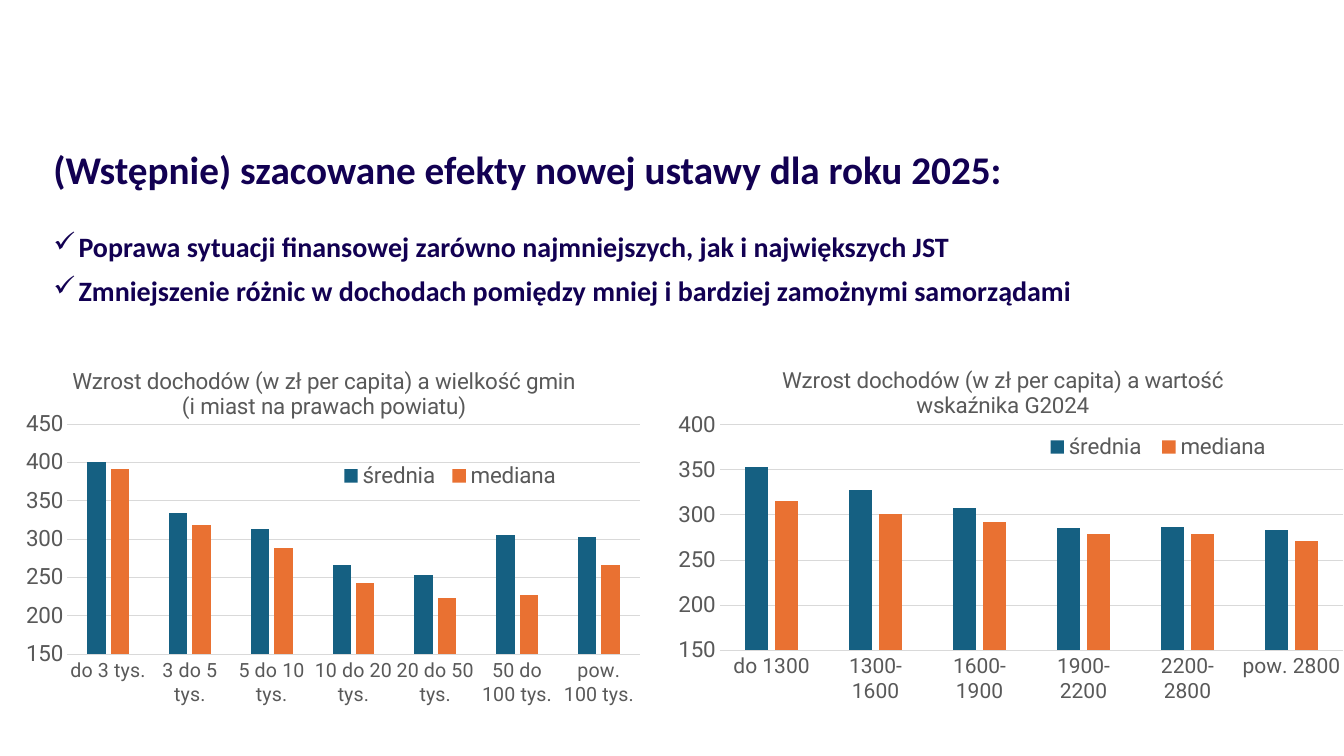
from dataclasses import dataclass

import pptx
import pptx.chart.chart
import pptx.chart.data
import pptx.dml.color
import pptx.enum.chart
import pptx.enum.text
import pptx.oxml
import pptx.oxml.ns
import pptx.slide
import pptx.text.text
import pptx.util

Pt = pptx.util.Pt


@dataclass(frozen=True)
class Theme:
    navy: str = "120052"
    grey: str = "595959"
    grid: str = "D9D9D9"
    series: tuple[str, ...] = ("156082", "E97132")
    text_font: str = "Calibri"
    chart_font: str = "Roboto"
    heading_size: float = 28
    bullet_size: float = 20
    chart_size: float = 16
    line_width: float = 0.75


@dataclass(frozen=True)
class Area:
    """A rectangle in points."""
    left: float
    top: float
    width: float
    height: float

    def lengths(self) -> tuple[pptx.util.Length, ...]:
        return Pt(self.left), Pt(self.top), Pt(self.width), Pt(self.height)


@dataclass(frozen=True)
class IncomeChart:
    title: str
    area: Area
    plot: Area
    legend: Area
    categories: tuple[str, ...]
    averages: tuple[int, ...]
    medians: tuple[int, ...]
    maximum: int
    category_size: float
    number_format: str


THEME = Theme()
HEADING = "(Wstępnie) szacowane efekty nowej ustawy dla roku 2025:"
BULLETS = (
    "Poprawa sytuacji finansowej zarówno najmniejszych, jak i największych JST",
    "Zmniejszenie różnic w dochodach pomiędzy mniej i bardziej zamożnymi samorządami",
)
CHARTS = (
    IncomeChart(
        title="Wzrost dochodów (w zł per capita) a wartość wskaźnika G2024",
        area=Area(473, 250, 487, 253),
        plot=Area(41.5, 54, 446, 162.5),
        legend=Area(268, 59, 173, 22),
        categories=("do 1300", "1300-1600", "1600-1900", "1900-2200", "2200-2800", "pow. 2800"),
        averages=(353, 328, 308, 285, 287, 283),
        medians=(315, 301, 292, 279, 279, 271),
        maximum=400, category_size=15, number_format="#,##0",
    ),
    IncomeChart(
        title="Wzrost dochodów (w zł per capita) a wielkość gmin (i miast na prawach powiatu)",
        area=Area(0, 250, 463, 266.4),
        plot=Area(48, 53, 409, 164.5),
        legend=Area(239, 79, 165, 22),
        categories=("do 3 tys.", "3 do 5 tys.", "5 do 10 tys.", "10 do 20 tys.",
                    "20 do 50 tys.", "50 do 100 tys.", "pow. 100 tys."),
        averages=(401, 334, 313, 267, 254, 306, 303),
        medians=(391, 318, 289, 243, 223, 227, 266),
        maximum=450, category_size=14, number_format="General",
    ),
)


def rgb(color: str) -> pptx.dml.color.RGBColor:
    return pptx.dml.color.RGBColor.from_string(color)


def style_font(font: pptx.text.text.Font, name: str, size: float, color: str,
               bold: bool = False) -> None:
    font.name, font.size, font.bold = name, Pt(size), bold
    font.color.rgb = rgb(color)


def write_text(para, text: str, *, size: float, color: str, font: str,
               bold: bool = False, space_before: float = 0,
               line_spacing: float | None = None, bullet: str = "") -> None:
    if bullet:
        properties = para._p.get_or_add_pPr()
        properties.set("marL", str(Pt(18)))
        properties.set("indent", str(Pt(-18)))
        mark = pptx.oxml.parse_xml(
            f'<a:buChar {pptx.oxml.ns.nsdecls("a")} char="{bullet}"/>')
        properties.append(mark)
    para.space_before = Pt(space_before)
    if line_spacing:
        para.line_spacing = line_spacing
    span = para.add_run()
    span.text = text
    style_font(span.font, font, size, color, bold)


def add_message(page: pptx.slide.Slide, area: Area) -> None:
    frame = page.shapes.add_textbox(*area.lengths()).text_frame
    frame.word_wrap = True
    frame.vertical_anchor = pptx.enum.text.MSO_ANCHOR.TOP
    common = dict(color=THEME.navy, font=THEME.text_font, bold=True, line_spacing=0.9)
    write_text(frame.paragraphs[0], HEADING, size=THEME.heading_size, **common)
    for index, text in enumerate(BULLETS):
        write_text(frame.add_paragraph(), text, size=THEME.bullet_size, bullet="✓",
                   space_before=10 if index else 29, **common)


def set_layout(parent, successors: tuple[str, ...], inside: Area, chart_area: Area,
               inner: bool = False) -> None:
    """Place a chart part by hand, as fractions of the chart area."""
    for old in parent.findall(pptx.oxml.ns.qn("c:layout")):
        parent.remove(old)
    fractions = {
        "x": inside.left / chart_area.width, "y": inside.top / chart_area.height,
        "w": inside.width / chart_area.width, "h": inside.height / chart_area.height,
    }
    target = '<c:layoutTarget val="inner"/>' if inner else ""
    modes = "".join(f'<c:{side}Mode val="edge"/>' for side in "xy")
    values = "".join(f'<c:{side} val="{value:.4f}"/>' for side, value in fractions.items())
    layout = pptx.oxml.parse_xml(
        f'<c:layout {pptx.oxml.ns.nsdecls("c")}><c:manualLayout>'
        f'{target}{modes}{values}</c:manualLayout></c:layout>')
    parent.insert_element_before(layout, *successors)


def style_axes(chart: pptx.chart.chart.Chart, income: IncomeChart) -> None:
    sizes = (income.category_size, THEME.chart_size)
    for axis, size in zip((chart.category_axis, chart.value_axis), sizes):
        axis.major_tick_mark = axis.minor_tick_mark = pptx.enum.chart.XL_TICK_MARK.NONE
        style_font(axis.tick_labels.font, THEME.chart_font, size, THEME.grey)
    values = chart.value_axis
    values.minimum_scale, values.maximum_scale, values.major_unit = 150, income.maximum, 50
    values.tick_labels.number_format = income.number_format
    values.tick_labels.number_format_is_linked = False
    values.format.line.fill.background()
    for line in (chart.category_axis.format.line, values.major_gridlines.format.line):
        line.color.rgb = rgb(THEME.grid)
        line.width = Pt(THEME.line_width)


def add_income_chart(page: pptx.slide.Slide, income: IncomeChart) -> None:
    data = pptx.chart.data.CategoryChartData()
    data.categories = income.categories
    data.add_series("średnia", income.averages)
    data.add_series("mediana", income.medians)
    chart = page.shapes.add_chart(
        pptx.enum.chart.XL_CHART_TYPE.COLUMN_CLUSTERED, *income.area.lengths(), data).chart
    style_font(chart.font, THEME.chart_font, 10, "000000")
    write_text(chart.chart_title.text_frame.paragraphs[0], income.title,
               size=THEME.chart_size, color=THEME.grey, font=THEME.chart_font)
    chart.chart_title.include_in_layout = False
    style_axes(chart, income)

    columns = chart.plots[0]
    columns.gap_width, columns.overlap, columns.vary_by_categories = 219, -27, False
    for series, color in zip(columns.series, THEME.series):
        series.format.fill.solid()
        series.format.fill.fore_color.rgb = rgb(color)

    chart.has_legend = True
    chart.legend.position = pptx.enum.chart.XL_LEGEND_POSITION.BOTTOM
    chart.legend.include_in_layout = False
    style_font(chart.legend.font, THEME.chart_font, THEME.chart_size, THEME.grey)
    set_layout(chart.legend._element, ("c:overlay", "c:spPr", "c:txPr"),
               income.legend, income.area)
    set_layout(chart._chartSpace.chart.plotArea, ("c:barChart",),
               income.plot, income.area, inner=True)


def main() -> None:
    deck = pptx.Presentation()
    deck.slide_width, deck.slide_height = Pt(960), Pt(540)
    page = deck.slides.add_slide(deck.slide_layouts[6])
    add_message(page, Area(31, 103.7, 862.5, 382.3))
    for income in CHARTS:
        add_income_chart(page, income)
    deck.save("out.pptx")


if __name__ == "__main__":
    main()
